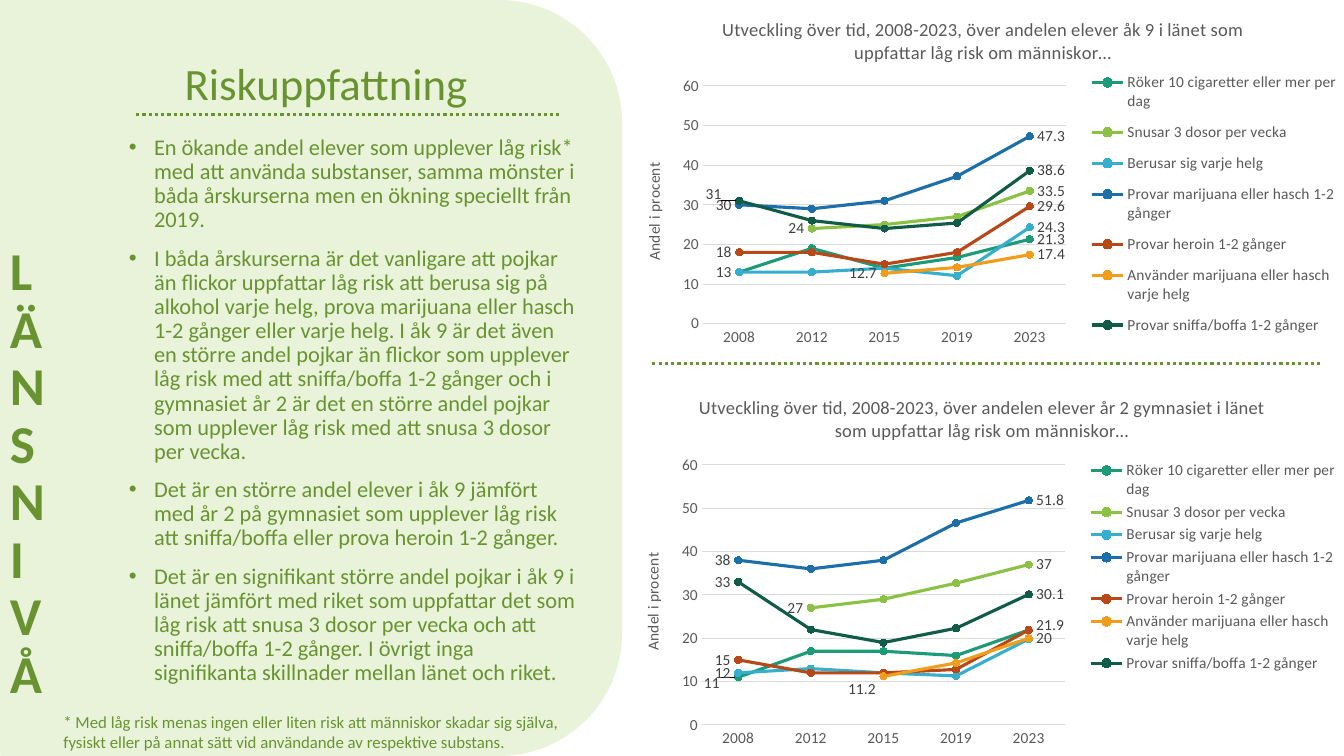
from lxml import etree
from pptx import Presentation
from pptx import util as u
from pptx.chart.data import CategoryChartData
from pptx.dml.color import RGBColor
from pptx.enum import chart as ch, dml, shapes, text
from pptx.oxml import parse_xml
from pptx.oxml.ns import nsdecls, qn

EMU_PER_PX = 9144  # 100 px to the inch
COLORS = {
    "panel": "E8F3DA", "green": "699331", "grey": "595959", "grid": "D9D9D9",
    "label": "404040", "smoke": "1D9A78", "snus": "8BC145", "drunk": "36AFCE",
    "try_hash": "1D6FA9", "heroin": "B74919", "use_hash": "F19D19", "sniff": "115C48",
}
SERIES_NAMES = {
    "smoke": "Röker 10 cigaretter eller mer per dag",
    "snus": "Snusar 3 dosor per vecka",
    "drunk": "Berusar sig varje helg",
    "try_hash": "Provar marijuana eller hasch 1-2 gånger",
    "heroin": "Provar heroin 1-2 gånger",
    "use_hash": "Använder marijuana eller hasch varje helg",
    "sniff": "Provar sniffa/boffa 1-2 gånger",
}
YEARS = ["2008", "2012", "2015", "2019", "2023"]
TITLE = "Utveckling över tid, 2008-2023, över andelen elever {} som uppfattar låg risk om människor…"

# Layouts are (x, y, w, h) as fractions of the chart.
# Labels list the labelled points; shifts move a label by a fraction of the chart.
GRADE_9 = {
    "group": "åk 9 i länet", "box": (617, 1, 716, 350),
    "plot": (0.112, 0.241, 0.503, 0.674), "legend": (0.64, 0.17, 0.36, 0.81),
    "values": {
        "smoke": (13, 19, 14, 16.7, 21.3), "snus": (None, 24, 25, 27, 33.5),
        "drunk": (13, 13, 14, 12.1, 24.3), "try_hash": (30, 29, 31, 37.2, 47.3),
        "heroin": (18, 18, 15, 18, 29.6), "use_hash": (None, None, 12.7, 14.2, 17.4),
        "sniff": (31, 26, 24, 25.4, 38.6),
    },
    "labels": {"smoke": [4], "snus": [1, 4], "drunk": [0, 4], "try_hash": [0, 4],
               "heroin": [0, 4], "use_hash": [2, 4], "sniff": [0, 4]},
    "shifts": {("sniff", 0): (-0.014, -0.02)},
}
YEAR_2 = {
    "group": "år 2 gymnasiet i länet", "box": (616, 375, 716, 375),
    "plot": (0.112, 0.23, 0.503, 0.688), "legend": (0.64, 0.21, 0.36, 0.58),
    "values": {
        "smoke": (11, 17, 17, 16, 21.9), "snus": (None, 27, 29, 32.7, 37),
        "drunk": (12, 13, 12, 11.3, 19.8), "try_hash": (38, 36, 38, 46.6, 51.8),
        "heroin": (15, 12, 12, 12.8, 21.9), "use_hash": (None, None, 11.2, 14.3, 20),
        "sniff": (33, 22, 19, 22.3, 30.1),
    },
    "labels": {"smoke": [0], "snus": [1, 4], "drunk": [0], "try_hash": [0, 4],
               "heroin": [0, 4], "use_hash": [2, 4], "sniff": [0, 4]},
    "shifts": {("smoke", 0): (-0.015, 0.016), ("heroin", 4): (0, -0.013),
               ("use_hash", 2): (0, 0.034)},
}
FINDINGS = [
    "En ökande andel elever som upplever låg risk* med att använda substanser, samma mönster i båda årskurserna men en ökning speciellt från 2019.",
    "I båda årskurserna är det vanligare att pojkar än flickor uppfattar låg risk att berusa sig på alkohol varje helg, prova marijuana eller hasch 1-2 gånger eller varje helg. I åk 9 är det även en större andel pojkar än flickor som upplever låg risk med att sniffa/boffa 1-2 gånger och i gymnasiet år 2 är det en större andel pojkar som upplever låg risk med att snusa 3 dosor per vecka.",
    "Det är en större andel elever i åk 9 jämfört med år 2 på gymnasiet som upplever låg risk att sniffa/boffa eller prova heroin 1-2 gånger.",
    "Det är en signifikant större andel pojkar i åk 9 i länet jämfört med riket som uppfattar det som låg risk att snusa 3 dosor per vecka och att sniffa/boffa 1-2 gånger. I övrigt inga signifikanta skillnader mellan länet och riket.",
]
FOOTNOTE = "* Med låg risk menas ingen eller liten risk att människor skadar sig själva, fysiskt eller på annat sätt vid användande av respektive substans."


def px(*lengths):
    return [u.Emu(length * EMU_PER_PX) for length in lengths]


def rgb(name):
    return RGBColor.from_string(COLORS[name])


def manual_layout(x, y, w=None, h=None, inner=False):
    """Layout element: a full box, or only an offset when w and h are missing."""
    parts = [("layoutTarget", "inner")] if inner else []
    if w is not None:
        parts += [("xMode", "edge"), ("yMode", "edge")]
    parts += [("x", x), ("y", y)]
    if w is not None:
        parts += [("w", w), ("h", h)]
    body = "".join(f'<c:{tag} val="{val}"/>' for tag, val in parts)
    return parse_xml(f'<c:layout {nsdecls("c")}><c:manualLayout>{body}</c:manualLayout></c:layout>')


class Deck:
    font = "Calibri"

    def __init__(self):
        self.prs = Presentation()
        self.prs.slide_width, self.prs.slide_height = px(1333, 750)
        self.slide = self.prs.slides.add_slide(self.prs.slide_layouts[6])

    def style(self, font, size, color, bold=False):
        font.name, font.size, font.bold = self.font, u.Pt(size), bold
        font.color.rgb = rgb(color)

    def panel(self, *box):
        panel = self.slide.shapes.add_shape(shapes.MSO_SHAPE.ROUNDED_RECTANGLE, *px(*box))
        panel.shadow.inherit = False
        panel.fill.solid()
        panel.fill.fore_color.rgb = rgb("panel")
        panel.line.fill.background()

    def dotted_line(self, left, right, y):
        rule = self.slide.shapes.add_connector(
            shapes.MSO_CONNECTOR.STRAIGHT, *px(left, y, right, y))
        rule.line.color.rgb = rgb("green")
        rule.line.width = u.Pt(2.25)
        rule.line.dash_style = dml.MSO_LINE.ROUND_DOT
        etree.SubElement(rule._element.spPr, qn("a:effectLst"))

    def text(self, box, paragraphs, size, bold=False, align=None, spacing=None,
             anchor=text.MSO_ANCHOR.TOP, bullets=False, stacked=False):
        holder = self.slide.shapes.add_textbox(*px(*box))
        frame = holder.text_frame
        frame.word_wrap = True
        frame.vertical_anchor = anchor
        if stacked:
            frame._txBody.bodyPr.set("vert", "wordArtVert")
        for i, words in enumerate(paragraphs):
            para = frame.add_paragraph() if i else frame.paragraphs[0]
            para.alignment, para.line_spacing = align, spacing
            if bullets:
                para.space_before = u.Pt(10)
                props = para._p.get_or_add_pPr()
                indent = px(25)[0]
                props.set("marL", str(indent))
                props.set("indent", str(-indent))
                etree.SubElement(props, qn("a:buFont")).set("typeface", "Arial")
                etree.SubElement(props, qn("a:buChar")).set("char", "•")
            run = para.add_run()
            run.text = words
            self.style(run.font, size, "green", bold)
        return holder

    def chart_title(self, owner, words, size):
        run = owner.text_frame.paragraphs[0].add_run()
        run.text = words
        self.style(run.font, size, "grey")

    def line_chart(self, spec_):
        data = CategoryChartData()
        data.categories = YEARS
        for key, values in spec_["values"].items():
            data.add_series(SERIES_NAMES[key], values)
        chart = self.slide.shapes.add_chart(
            ch.XL_CHART_TYPE.LINE_MARKERS, *px(*spec_["box"]), data).chart
        self.style(chart.font, 11, "grey")
        chart.has_title = True
        self.chart_title(chart.chart_title, TITLE.format(spec_["group"]), 13.2)
        self.axes(chart)
        self.legend(chart, spec_["legend"])
        plot_area = chart._chartSpace.chart.plotArea
        for old in plot_area.findall(qn("c:layout")):
            plot_area.remove(old)
        plot_area.insert(0, manual_layout(*spec_["plot"], inner=True))
        chart.plots[0].vary_by_categories = False
        for key, series in zip(spec_["values"], chart.plots[0].series):
            self.series(series, key, spec_["labels"][key], spec_["shifts"])

    def axes(self, chart):
        years, percent = chart.category_axis, chart.value_axis
        for axis in (years, percent):
            self.style(axis.tick_labels.font, 11, "grey")
            axis.major_tick_mark = axis.minor_tick_mark = ch.XL_TICK_MARK.NONE
        percent.minimum_scale, percent.maximum_scale, percent.major_unit = 0, 60, 10
        percent.format.line.fill.background()
        for line in (years.format.line, percent.major_gridlines.format.line):
            line.color.rgb = rgb("grid")
            line.width = u.Pt(0.75)
        self.chart_title(percent.axis_title, "Andel i procent", 11)
        turned = percent.axis_title.text_frame._txBody.bodyPr
        turned.set("rot", "-5400000")
        turned.set("vert", "horz")

    def legend(self, chart, box):
        chart.has_legend = True
        chart.legend.position = ch.XL_LEGEND_POSITION.RIGHT
        chart.legend.include_in_layout = False
        self.style(chart.legend.font, 11, "grey")
        legend = chart.legend._element
        for old in legend.findall(qn("c:layout")):
            legend.remove(old)
        legend.find(qn("c:legendPos")).addnext(manual_layout(*box))

    def series(self, series, key, labelled, shifts):
        series.smooth = False
        series.format.line.color.rgb = rgb(key)
        series.format.line.width = u.Pt(2.25)
        series.marker.style, series.marker.size = ch.XL_MARKER_STYLE.CIRCLE, 5
        series.marker.format.fill.solid()
        series.marker.format.fill.fore_color.rgb = rgb(key)
        series.marker.format.line.color.rgb = rgb(key)
        series.data_labels.show_value = False
        last = len(YEARS) - 1
        for i in labelled:
            label = series.points[i].data_label
            self.style(label.font, 11, "label")
            label.position = (ch.XL_LABEL_POSITION.RIGHT if i == last
                              else ch.XL_LABEL_POSITION.LEFT)
            if (key, i) in shifts:
                element = series.data_labels._element.xpath(f"c:dLbl[c:idx/@val={i}]")[0]
                element.find(qn("c:idx")).addnext(manual_layout(*shifts[key, i]))


def main():
    deck = Deck()
    deck.panel(-114, 0, 731, 750)
    deck.line_chart(GRADE_9)
    deck.line_chart(YEAR_2)
    bottom = text.MSO_ANCHOR.BOTTOM
    deck.text((0, 47, 105, 657), ["LÄNSNIVÅ"], 38, bold=True, spacing=0.9,
              anchor=bottom, stacked=True)
    deck.text((136, 16, 375, 98), ["Riskuppfattning"], 32, spacing=0.9,
              align=text.PP_ALIGN.CENTER, anchor=bottom)
    deck.dotted_line(135, 556, 114)
    deck.dotted_line(647, 1312, 361)
    findings = deck.text((118, 130, 468, 581), FINDINGS, 16, spacing=0.9, bullets=True)
    findings.fill.solid()
    findings.fill.fore_color.rgb = rgb("panel")
    deck.text((53, 701, 518, 50), [FOOTNOTE], 12)
    deck.prs.save("out.pptx")


if __name__ == "__main__":
    main()
